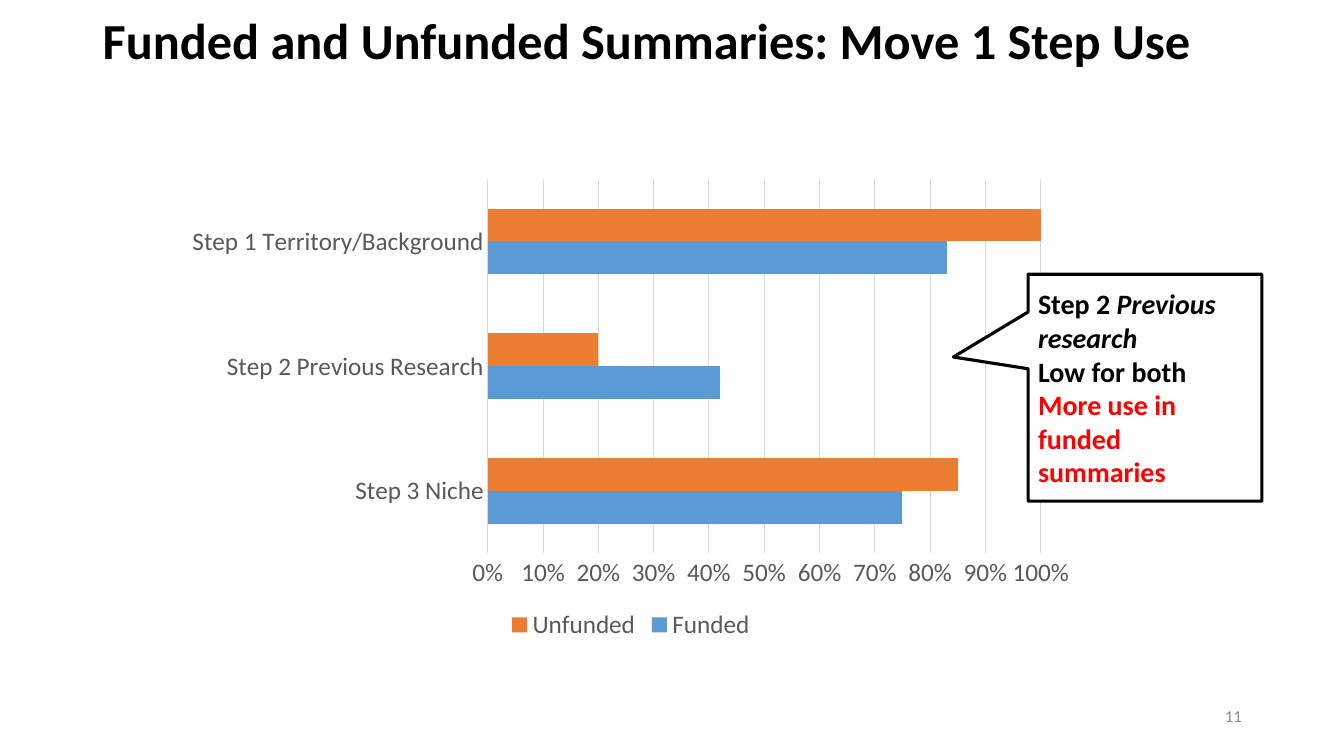
from dataclasses import dataclass

from pptx import Presentation
from pptx.chart.data import CategoryChartData
from pptx.dml.color import RGBColor
from pptx.enum.chart import XL_CHART_TYPE, XL_LEGEND_POSITION, XL_TICK_MARK
from pptx.enum.shapes import MSO_SHAPE
from pptx.enum.text import MSO_ANCHOR, PP_ALIGN
from pptx.util import Cm, Pt

BAR_CLUSTERED = XL_CHART_TYPE.BAR_CLUSTERED
LEGEND_BOTTOM = XL_LEGEND_POSITION.BOTTOM
NO_TICK = XL_TICK_MARK.NONE
CALLOUT = MSO_SHAPE.RECTANGULAR_CALLOUT
MIDDLE = MSO_ANCHOR.MIDDLE
LEFT, RIGHT = PP_ALIGN.LEFT, PP_ALIGN.RIGHT

FONT = "Calibri"
COLORS = {
    "black": "000000",
    "white": "FFFFFF",
    "red": "FF0000",
    "label": "595959",
    "grid": "D9D9D9",
    "number": "8C8C8C",
    "funded": "5B9BD5",
    "unfunded": "ED7D31",
}


@dataclass
class Box:
    left: float
    top: float
    width: float
    height: float

    def lengths(self):
        return Cm(self.left), Cm(self.top), Cm(self.width), Cm(self.height)


@dataclass
class Run:
    text: str
    italic: bool = False
    color: str = "black"


@dataclass
class SummarySeries:
    name: str
    values: tuple[float, ...]
    color: str


TITLE_BOX = Box(2.34, 0.13, 29.21, 1.7)
NUMBER_BOX = Box(23.93, 17.53, 7.62, 1.02)
CHART_BOX = Box(4.39, 4.27, 23.01, 11.99)
CALLOUT_BOX = Box(25.91, 6.91, 5.89, 5.72)

STEPS = ("Step 3 Niche", "Step 2 Previous Research", "Step 1 Territory/Background")
SERIES = (
    SummarySeries("Funded", (0.75, 0.42, 0.83), "funded"),
    SummarySeries("Unfunded", (0.85, 0.2, 1), "unfunded"),
)
CALLOUT_TEXT = (
    (Run("Step 2 "), Run("Previous research", italic=True)),
    (Run("Low for both"),),
    (Run("More use in funded summaries", color="red"),),
)


def rgb(name: str) -> RGBColor:
    return RGBColor.from_string(COLORS[name])


def format_font(font, size: float, color: str, bold=False, italic=False) -> None:
    font.name = FONT
    font.size = Pt(size)
    font.bold = bold
    font.italic = italic
    font.color.rgb = rgb(color)


def write_text(shape, paragraphs, *, size: float, bold=False, align=LEFT) -> None:
    frame = shape.text_frame
    frame.word_wrap = True
    frame.vertical_anchor = MIDDLE
    for index, runs in enumerate(paragraphs):
        paragraph = frame.add_paragraph() if index else frame.paragraphs[0]
        paragraph.alignment = align
        for item in runs:
            run = paragraph.add_run()
            run.text = item.text
            format_font(run.font, size, item.color, bold, item.italic)


def format_line(line, color: str, width: float) -> None:
    line.color.rgb = rgb(color)
    line.width = Pt(width)


def add_step_chart(slide, box: Box) -> None:
    data = CategoryChartData(number_format="0%")
    data.categories = STEPS
    for series in SERIES:
        data.add_series(series.name, series.values)
    chart = slide.shapes.add_chart(BAR_CLUSTERED, *box.lengths(), data).chart
    chart.has_title = False
    format_font(chart.font, 10, "black")

    plot = chart.plots[0]
    plot.gap_width = 182
    plot.overlap = 0
    plot.vary_by_categories = False
    for drawn, series in zip(plot.series, SERIES):
        drawn.invert_if_negative = False
        drawn.format.fill.solid()
        drawn.format.fill.fore_color.rgb = rgb(series.color)

    category_axis, value_axis = chart.category_axis, chart.value_axis
    for axis in (category_axis, value_axis):
        axis.major_tick_mark = NO_TICK
        axis.minor_tick_mark = NO_TICK
        format_font(axis.tick_labels.font, 18, "label")
    format_line(category_axis.format.line, "grid", 0.75)
    value_axis.format.line.fill.background()
    value_axis.minimum_scale = 0
    value_axis.maximum_scale = 1
    value_axis.major_unit = 0.1
    value_axis.tick_labels.number_format = "0%"
    value_axis.tick_labels.number_format_is_linked = False
    value_axis.has_major_gridlines = True
    format_line(value_axis.major_gridlines.format.line, "grid", 0.75)

    chart.has_legend = True
    chart.legend.position = LEGEND_BOTTOM
    chart.legend.include_in_layout = False
    format_font(chart.legend.font, 18, "label")


def add_callout(slide, box: Box) -> None:
    shape = slide.shapes.add_shape(CALLOUT, *box.lengths())
    shape.shadow.inherit = False
    shape.adjustments[0] = -0.82
    shape.adjustments[1] = -0.135
    shape.fill.solid()
    shape.fill.fore_color.rgb = rgb("white")
    format_line(shape.line, "black", 2.25)
    write_text(shape, CALLOUT_TEXT, size=20, bold=True)


def main() -> None:
    presentation = Presentation()
    presentation.slide_width = Cm(33.87)
    presentation.slide_height = Cm(19.05)
    slide = presentation.slides.add_slide(presentation.slide_layouts[6])

    title = slide.shapes.add_textbox(*TITLE_BOX.lengths())
    title_run = Run("Funded and Unfunded Summaries: Move 1 Step Use")
    write_text(title, ((title_run,),), size=36, bold=True)

    number = slide.shapes.add_textbox(*NUMBER_BOX.lengths())
    write_text(number, ((Run("11", color="number"),),), size=12, align=RIGHT)

    add_step_chart(slide, CHART_BOX)
    add_callout(slide, CALLOUT_BOX)
    presentation.save("out.pptx")


if __name__ == "__main__":
    main()
